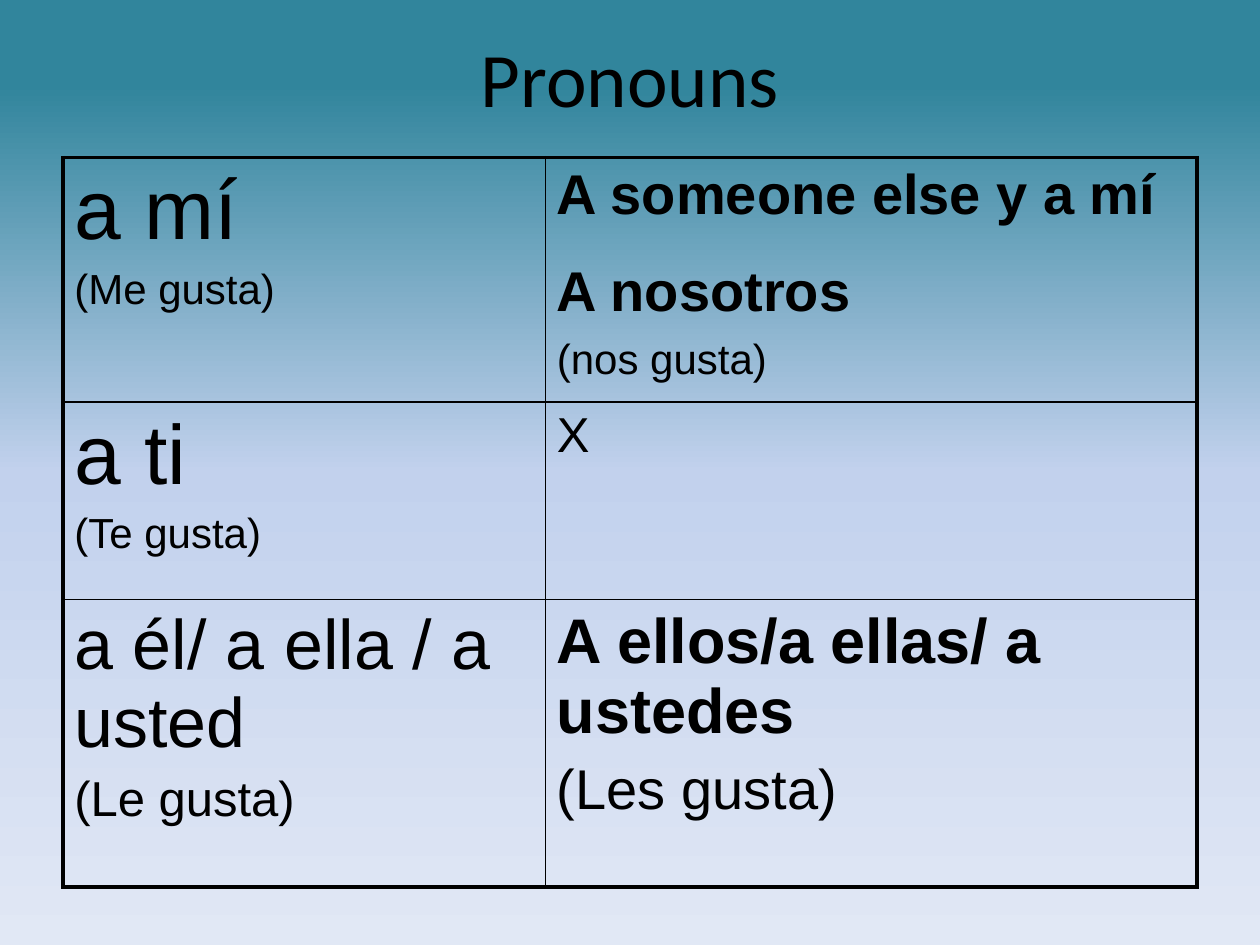
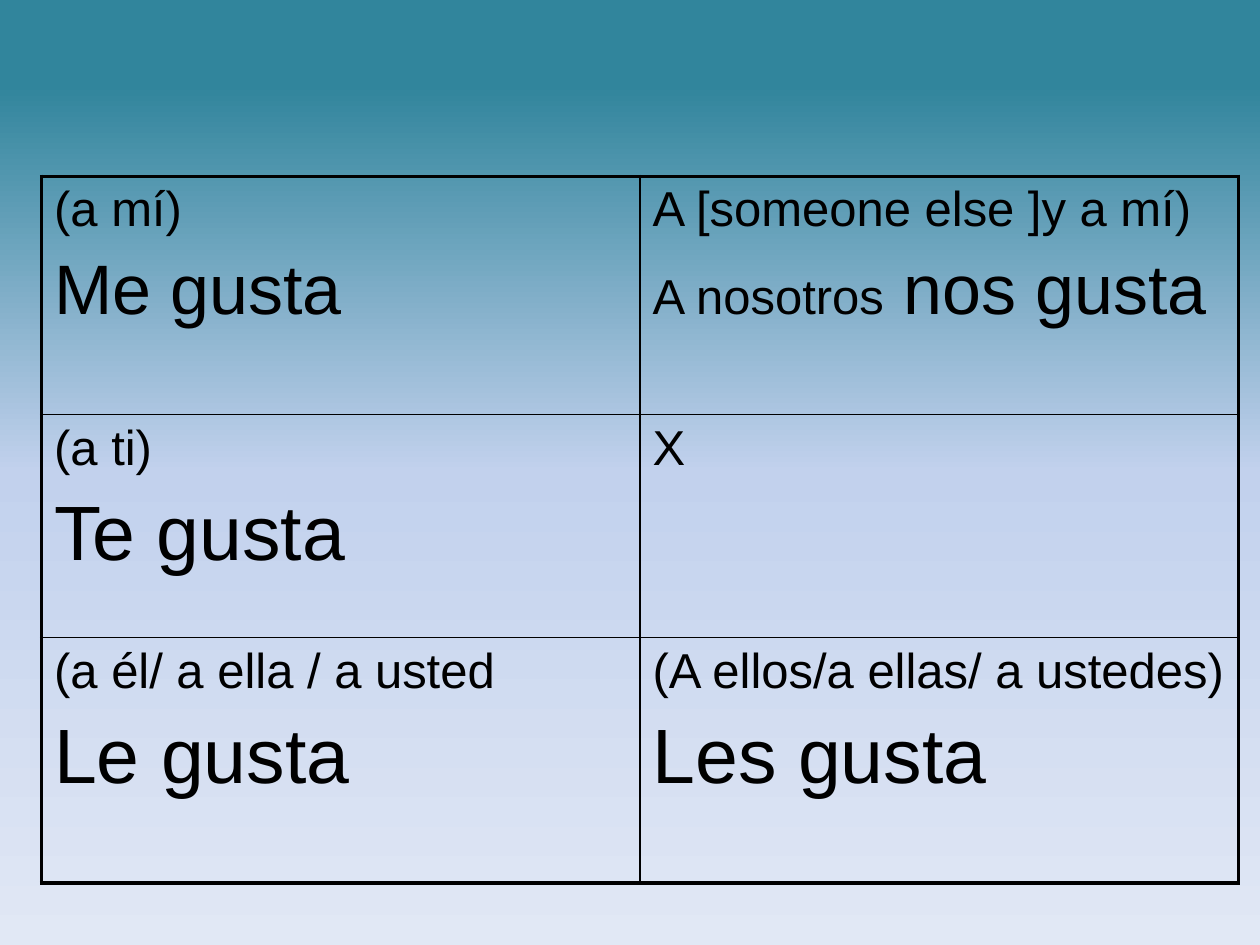
"""Build two slides with tables of Spanish pronouns and the forms of gustar."""
from copy import deepcopy
from dataclasses import dataclass

from lxml import etree
from pptx import Presentation
from pptx.dml.color import RGBColor
from pptx.enum.text import MSO_ANCHOR, PP_ALIGN
from pptx.oxml.ns import qn
from pptx.util import Inches, Pt

CENTER, MIDDLE = PP_ALIGN.CENTER, MSO_ANCHOR.MIDDLE
TITLE_ONLY, BLANK = 5, 6


@dataclass(frozen=True)
class Theme:
    ink: str = "000000"
    gradient: tuple = ((0.09, "31859C"), (0.5, "C2D1ED"), (1, "E1E8F5"))
    title_font: str = "Calibri"
    body_font: str = "Arial"
    title: int = 44
    giant: int = 48
    huge: int = 44
    big: int = 40
    strong: int = 36
    medium: int = 32
    normal: int = 28
    small: int = 24
    outer_line: float = 2.25
    inner_line: float = 1
    space_before: float = 0.2


T = Theme()

SLIDES = [
    {
        "title": "Pronouns",
        "at": (0.5, 1.25), "cols": (3.83, 5.17), "rows": (1.94, 1.57, 2.28), "inset": 0.09,
        "cells": [
            [[[("a mí", T.giant, False)], [("(Me gusta)", T.small, False)]],
             [[("A someone else y a mí", T.medium, True)],
              [("A nosotros", T.medium, True), (" ", T.huge, True)],
              [("(nos gusta)", T.small, False)]]],
            [[[("a ti", T.giant, False)], [("(Te gusta)", T.small, False)]],
             [[("X", T.normal, False)]]],
            [[[("a él/ a ella / a usted", T.big, False)], [("(Le gusta)", T.normal, False)]],
             [[("A ellos/a ellas/ a ustedes", T.strong, True)],
              [("(Les gusta)", T.medium, False)]]],
        ],
    },
    {
        "title": None,
        "at": (0.33, 1.4), "cols": (4.75, 4.75), "rows": (1.89, 1.77, 1.95), "inset": 0.1,
        "cells": [
            [[[("(a mí)", T.normal, False)], [("Me gusta", T.big, False)]],
             [[("A [someone else ]y a mí)", T.normal, False)],
              [("A nosotros", T.normal, False), (" nos gusta", T.big, False)]]],
            [[[("(a ti)", T.normal, False)], [("Te gusta", T.huge, False)]],
             [[("X", T.normal, False)]]],
            [[[("(a él/ a ella / a usted", T.normal, False)], [("Le gusta", T.huge, False)]],
             [[("(A ellos/a ellas/ a ustedes)", T.normal, False)],
              [("Les gusta", T.huge, False)]]],
        ],
    },
]


def set_background(master):
    fill = master.background.fill
    fill.gradient()
    fill.gradient_angle = 270
    stops = master.element.xpath(".//p:bg//a:gsLst")[0]
    stops.append(deepcopy(stops[0]))
    for stop, (position, color) in zip(fill.gradient_stops, T.gradient):
        stop.position = position
        stop.color.rgb = RGBColor.from_string(color)


def add_run(p, text, font, size, bold=False):
    r = p.add_run()
    r.text = text
    r.font.name, r.font.size, r.font.bold = font, Pt(size), bold
    r.font.color.rgb = RGBColor.from_string(T.ink)


def add_title(s, text):
    title = s.shapes.title
    title.left, title.top = Inches(0.5), Inches(0.17)
    title.width, title.height = Inches(9), Inches(0.88)
    tf = title.text_frame
    tf.vertical_anchor = MIDDLE
    p = tf.paragraphs[0]
    p.alignment = CENTER
    add_run(p, text, T.title_font, T.title)


def set_borders(cell, outer_sides):
    tc_pr = cell._tc.get_or_add_tcPr()
    for side, is_outer in outer_sides.items():
        width = Pt(T.outer_line if is_outer else T.inner_line)
        ln = etree.SubElement(tc_pr, qn(f"a:ln{side}"), w=str(int(width)))
        fill = etree.SubElement(ln, qn("a:solidFill"))
        etree.SubElement(fill, qn("a:srgbClr"), val=T.ink)


def fill_cell(cell, paragraphs, inset):
    cell.margin_left = cell.margin_right = Inches(inset)
    cell.margin_top = cell.margin_bottom = Inches(0.05)
    tf = cell.text_frame
    for i, runs in enumerate(paragraphs):
        p = tf.add_paragraph() if i else tf.paragraphs[0]
        if i:
            p.space_before = Pt(T.space_before * max(size for _, size, _ in runs))
        for text, size, bold in runs:
            add_run(p, text, T.body_font, size, bold)


def add_pronoun_table(s, content):
    cols, rows = content["cols"], content["rows"]
    left, top = content["at"]
    frame = s.shapes.add_table(len(rows), len(cols), Inches(left), Inches(top),
                               Inches(sum(cols)), Inches(sum(rows)))
    table = frame.table
    table.first_row = table.horz_banding = False
    for column, width in zip(table.columns, cols):
        column.width = Inches(width)
    for row, height in zip(table.rows, rows):
        row.height = Inches(height)
    for i, row in enumerate(content["cells"]):
        for j, paragraphs in enumerate(row):
            cell = table.cell(i, j)
            fill_cell(cell, paragraphs, content["inset"])
            set_borders(cell, {"L": j == 0, "R": j == len(cols) - 1,
                               "T": i == 0, "B": i == len(rows) - 1})
            cell.fill.background()


def main():
    prs = Presentation()
    prs.slide_width, prs.slide_height = Inches(10), Inches(7.5)
    set_background(prs.slide_master)
    for content in SLIDES:
        layout = TITLE_ONLY if content["title"] else BLANK
        s = prs.slides.add_slide(prs.slide_layouts[layout])
        if content["title"]:
            add_title(s, content["title"])
        add_pronoun_table(s, content)
    prs.save("out.pptx")


if __name__ == "__main__":
    main()
